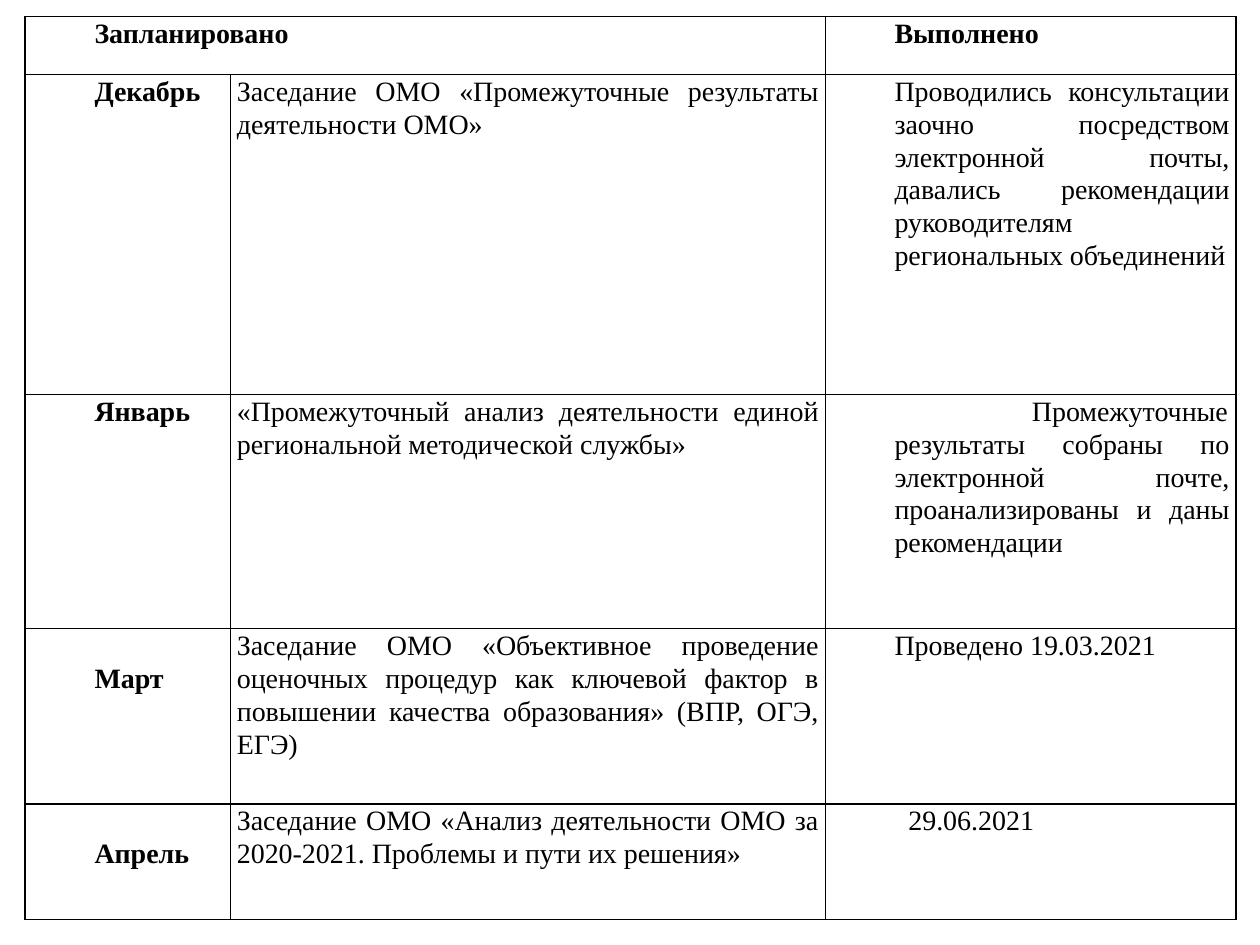
from lxml import etree
from pptx import Presentation
from pptx.dml.color import RGBColor
from pptx.enum.text import PP_ALIGN
from pptx.oxml.ns import qn
from pptx.util import Inches, Pt

LEFT, JUSTIFY = PP_ALIGN.LEFT, PP_ALIGN.JUSTIFY
BLACK = RGBColor(0, 0, 0)
WHITE = RGBColor(255, 255, 255)
FONT = {"name": "Times New Roman", "size": Pt(16)}
LINE_SPACING = 1.06
LINE_HEIGHT = 0.26
INDENT = 0.5

COLUMN_WIDTHS = [1.63, 4.72, 3.26]
ROW_HEIGHTS = [0.46, 2.54, 1.86, 1.39, 0.92]
HEADINGS = {0: "Запланировано", 2: "Выполнено"}
PLAN = [
    ("Декабрь", "Заседание ОМО «Промежуточные результаты деятельности ОМО»",
     "Проводились консультации заочно посредством электронной почты, "
     "давались рекомендации руководителям региональных объединений"),
    ("Январь", "«Промежуточный анализ деятельности единой региональной методической службы»",
     "Промежуточные результаты собраны по электронной почте, "
     "проанализированы и даны рекомендации"),
    ("Март", "Заседание ОМО «Объективное проведение оценочных процедур как ключевой "
     "фактор в повышении качества образования» (ВПР, ОГЭ, ЕГЭ)",
     "Проведено 19.03.2021"),
    ("Апрель", "Заседание ОМО «Анализ деятельности ОМО за 2020-2021. "
     "Проблемы и пути их решения»", "29.06.2021"),
]
LOWERED_MONTHS = {"Март", "Апрель"}
FIRST_LINE_INDENTS = {"Январь": 1.09, "Апрель": 0.11}


def add_borders(cell):
    properties = cell._tc.get_or_add_tcPr()
    for position, side in enumerate(("lnL", "lnR", "lnT", "lnB")):
        line = etree.Element(qn(f"a:{side}"), w=str(Pt(1)))
        fill = etree.SubElement(line, qn("a:solidFill"))
        etree.SubElement(fill, qn("a:srgbClr"), val=str(BLACK))
        properties.insert(position, line)


def write_cell(cell, text, bold=False, align=LEFT, indent=INDENT, first_line=0, top=0):
    cell.margin_left = cell.margin_right = Inches(0.05)
    cell.margin_top, cell.margin_bottom = Inches(top), 0
    para = cell.text_frame.paragraphs[0]
    para.alignment = align
    para.line_spacing = LINE_SPACING
    properties = para._p.get_or_add_pPr()
    properties.set("marL", str(Inches(indent)))
    properties.set("indent", str(Inches(first_line)))
    span = para.add_run()
    span.text = text
    for name, value in {**FONT, "bold": bold}.items():
        setattr(span.font, name, value)
    span.font.color.rgb = BLACK


deck = Presentation()
deck.slide_width, deck.slide_height = Inches(10), Inches(7.5)
page = deck.slides.add_slide(deck.slide_layouts[6])
table = page.shapes.add_table(
    len(ROW_HEIGHTS), len(COLUMN_WIDTHS), Inches(0.2), Inches(0.13),
    Inches(sum(COLUMN_WIDTHS)), Inches(sum(ROW_HEIGHTS))).table
table.first_row = table.horz_banding = False
for column, width in zip(table.columns, COLUMN_WIDTHS):
    column.width = Inches(width)
for row, height in zip(table.rows, ROW_HEIGHTS):
    row.height = Inches(height)
for cell in table.iter_cells():
    cell.fill.solid()
    cell.fill.fore_color.rgb = WHITE
    add_borders(cell)

table.cell(0, 0).merge(table.cell(0, 1))
for index, heading in HEADINGS.items():
    write_cell(table.cell(0, index), heading, bold=True)
for index, (month, planned, done) in enumerate(PLAN, start=1):
    write_cell(table.cell(index, 0), month, bold=True,
               top=LINE_HEIGHT if month in LOWERED_MONTHS else 0)
    write_cell(table.cell(index, 1), planned, align=JUSTIFY, indent=0)
    write_cell(table.cell(index, 2), done, align=JUSTIFY,
               first_line=FIRST_LINE_INDENTS.get(month, 0))

deck.save("out.pptx")
